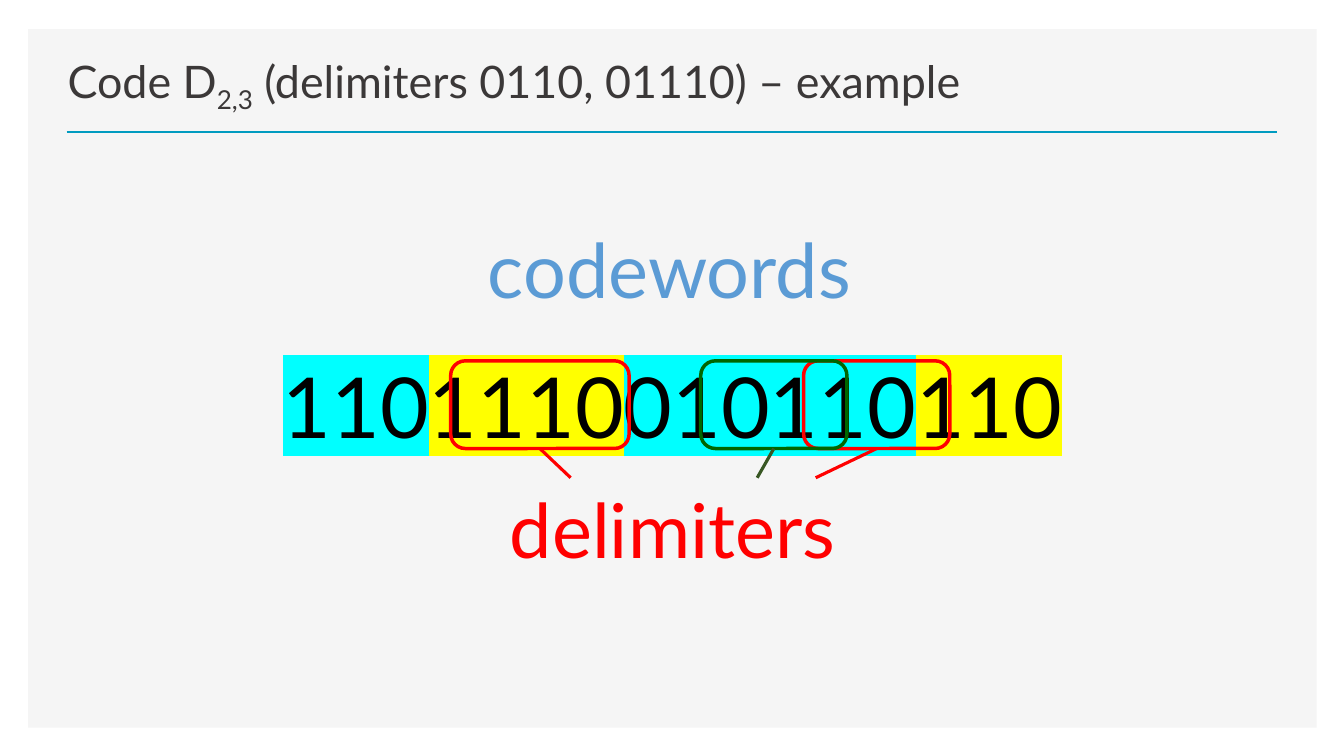
from lxml.etree import SubElement
from pptx import Presentation
from pptx.dml.color import RGBColor
from pptx.enum.shapes import MSO_CONNECTOR, MSO_SHAPE
from pptx.enum.text import MSO_ANCHOR, MSO_AUTO_SIZE, PP_ALIGN
from pptx.oxml.ns import qn
from pptx.util import Pt

PX = 9144
FONT = "Lato"
COLORS = {
    "panel": "F5F5F5", "rule": "009BC0", "title": "3B3838", "digits": "000000",
    "blue": "5B9BD5", "red": "FF0000", "green": "006600", "dark_green": "385723",
    "cyan": "00FFFF", "yellow": "FFFF00",
}
TITLE = [("Code D", 0), ("2,3", -25000), (" (delimiters 0110, 01110) – example", 0)]
CODEWORDS = [("110", "cyan"), ("1110", "yellow"), ("010110", "cyan"), ("110", "yellow")]
LABELS = [("codewords", 472, 216, 384, "blue"), ("delimiters", 493, 474, 348, "red")]
DELIMITERS = [
    (447, 177, "red", 566, "red"),
    (797, 145, "red", 809, "red"),
    (695, 145, "green", 751, "dark_green"),
]
ROW_TOP, ROW_H, LABEL_H, POINTER_END = 358, 87, 101, 474


def px(*lengths):
    return [n * PX for n in lengths]


def rgb(name):
    return RGBColor.from_string(COLORS[name])


def style(p, size, color, align):
    p.alignment = align
    p.font.name = FONT
    p.font.size = Pt(size)
    p.font.color.rgb = rgb(color)


def add_run(p, text):
    r = p.add_run()
    r.text = text
    return r._r.get_or_add_rPr()


def add_line(x1, y1, x2, y2, color, width):
    line = s.shapes.add_connector(MSO_CONNECTOR.STRAIGHT, *px(x1, y1, x2, y2))
    line.line.color.rgb = rgb(color)
    line.line.width = Pt(width)
    SubElement(line._element.spPr, qn("a:effectLst"))
    return line


def add_text(x, y, w, h):
    tf = s.shapes.add_textbox(*px(x, y, w, h)).text_frame
    return tf, tf.paragraphs[0]


prs = Presentation()
prs.slide_width, prs.slide_height = px(1333, 750)
s = prs.slides.add_slide(prs.slide_layouts[5])

panel = s.shapes.add_shape(MSO_SHAPE.RECTANGLE, *px(28, 29, 1278, 693))
panel.shadow.inherit = False
panel.fill.solid()
panel.fill.fore_color.rgb = rgb("panel")
panel.line.fill.background()
add_line(66, 131, 1267, 131, "rule", 2)

title = s.shapes.title
s.shapes._spTree.append(title._element)
title.left, title.top, title.width, title.height = px(57, 49, 938, 70)
title.text_frame.vertical_anchor = MSO_ANCHOR.BOTTOM
p = title.text_frame.paragraphs[0]
style(p, 32, "title", PP_ALIGN.LEFT)
for text, baseline in TITLE:
    rPr = add_run(p, text)
    if baseline:
        rPr.set("baseline", str(baseline))

tf, p = add_text(198, ROW_TOP, 938, ROW_H)
tf.word_wrap = True
tf.vertical_anchor = MSO_ANCHOR.MIDDLE
style(p, 60, "digits", PP_ALIGN.CENTER)
for text, color in CODEWORDS:
    highlight = SubElement(add_run(p, text), qn("a:highlight"))
    SubElement(highlight, qn("a:srgbClr"), val=COLORS[color])

for text, x, y, w, color in LABELS:
    tf, p = add_text(x, y, w, LABEL_H)
    tf.word_wrap = False
    tf.auto_size = MSO_AUTO_SIZE.SHAPE_TO_FIT_TEXT
    p.text = text
    style(p, 54, color, PP_ALIGN.CENTER)

for x, w, color, end_x, pointer_color in DELIMITERS:
    frame = s.shapes.add_shape(MSO_SHAPE.ROUNDED_RECTANGLE, *px(x, ROW_TOP, w, ROW_H))
    frame.shadow.inherit = False
    frame.fill.background()
    frame.line.color.rgb = rgb(color)
    frame.line.width = Pt(2.5)
    pointer = add_line(end_x, POINTER_END, x + w // 2, ROW_TOP + ROW_H, pointer_color, 2.25)
    pointer.end_connect(frame, 2)

prs.save("out.pptx")
